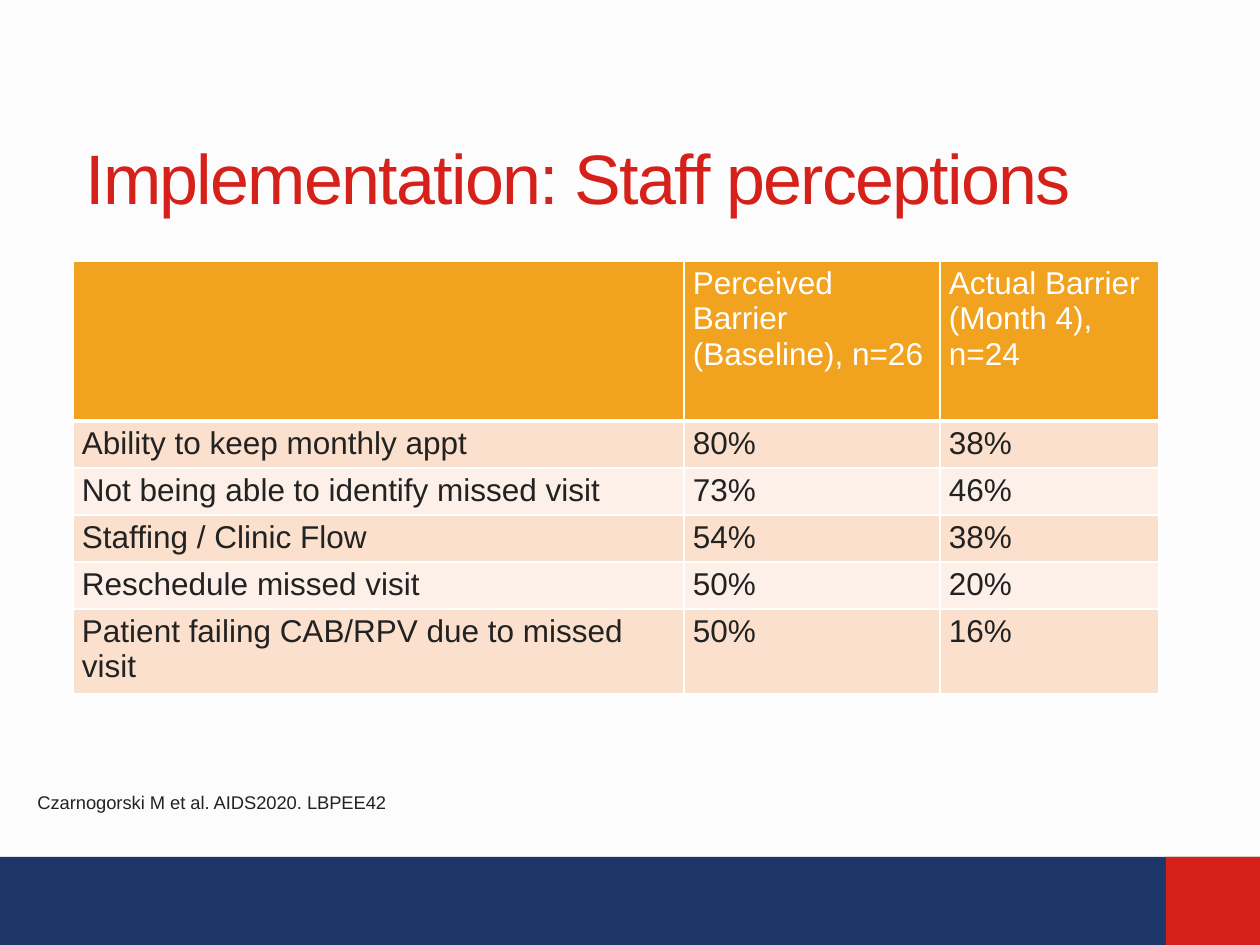
from typing import NamedTuple

import pptx
import pptx.dml.color
import pptx.enum.shapes
import pptx.enum.text
import pptx.oxml
import pptx.oxml.ns
import pptx.util

RGBColor = pptx.dml.color.RGBColor
BACKGROUND = RGBColor(0xFC, 0xFC, 0xFC)
NAVY = RGBColor(0x1C, 0x37, 0x68)
RED = RGBColor(0xD6, 0x20, 0x1A)
ORANGE = RGBColor(0xF1, 0xA2, 0x1F)
PEACH = RGBColor(0xFA, 0xE0, 0xCD)
PALE_PEACH = RGBColor(0xFC, 0xF0, 0xE8)
WHITE = RGBColor(0xFF, 0xFF, 0xFF)
INK = RGBColor(0x22, 0x22, 0x22)

FONT = "Arial"
PX_PER_INCH = 126


class Box(NamedTuple):
    left: int
    top: int
    width: int
    height: int


class Band(NamedTuple):
    box: Box
    color: RGBColor


class Barrier(NamedTuple):
    name: str
    perceived: str
    actual: str


SLIDE = Box(0, 0, 1260, 945)
TITLE = Box(73, 108, 1086, 138)
TABLE = Box(73, 261, 1086, 433)
CITATION = Box(25, 785, 499, 36)
FOOTER_BANDS = [
    Band(Box(0, 857, 1260, 88), NAVY),
    Band(Box(1166, 857, 94, 88), RED),
]
COLUMN_WIDTHS = [611, 256, 219]
ROW_HEIGHTS = [160, 47, 47, 47, 47, 85]
BARRIERS = [
    Barrier("", "Perceived Barrier (Baseline), n=26", "Actual Barrier (Month 4), n=24"),
    Barrier("Ability to keep monthly appt", "80%", "38%"),
    Barrier("Not being able to identify missed visit", "73%", "46%"),
    Barrier("Staffing / Clinic Flow", "54%", "38%"),
    Barrier("Reschedule missed visit", "50%", "20%"),
    Barrier("Patient failing CAB/RPV due to missed visit", "50%", "16%"),
]


def px(length: int) -> int:
    return pptx.util.Inches(length / PX_PER_INCH)


def emu(box: Box) -> list[int]:
    return [px(length) for length in box]


def write(frame, text: str, *, size: float, color: RGBColor, spacing: float = 0) -> None:
    """Fill a text frame; spacing is the letter spacing in points."""
    frame.word_wrap = True
    paragraph = frame.paragraphs[0]
    paragraph.alignment = pptx.enum.text.PP_ALIGN.LEFT
    paragraph.font.size = pptx.util.Pt(size)
    if not text:
        return
    run = paragraph.add_run()
    run.text = text
    run.font.name = FONT
    run.font.size = pptx.util.Pt(size)
    run.font.color.rgb = color
    if spacing:
        run.font._element.set("spc", str(round(spacing * 100)))


def add_band(slide, band: Band) -> None:
    rectangle = slide.shapes.add_shape(
        pptx.enum.shapes.MSO_SHAPE.RECTANGLE, *emu(band.box)
    )
    rectangle.shadow.inherit = False
    rectangle.fill.solid()
    rectangle.fill.fore_color.rgb = band.color
    rectangle.line.fill.background()


def border_cell(cell, bottom_width: int) -> None:
    """Give a cell white 1 pt borders, with its own width at the bottom."""
    properties = cell._tc.get_or_add_tcPr()
    widths = {"lnL": 1, "lnR": 1, "lnT": 1, "lnB": bottom_width}
    for position, (side, width) in enumerate(widths.items()):
        properties.insert(position, pptx.oxml.parse_xml(
            f'<a:{side} {pptx.oxml.ns.nsdecls("a")} w="{pptx.util.Pt(width)}">'
            f'<a:solidFill><a:srgbClr val="{WHITE}"/></a:solidFill></a:{side}>'
        ))


def add_barrier_table(slide) -> None:
    table = slide.shapes.add_table(
        len(BARRIERS), len(COLUMN_WIDTHS), *emu(TABLE)
    ).table
    for column, width in zip(table.columns, COLUMN_WIDTHS):
        column.width = px(width)
    for index, (row, barrier) in enumerate(zip(table.rows, BARRIERS)):
        row.height = px(ROW_HEIGHTS[index])
        is_header = index == 0
        fill = ORANGE if is_header else PEACH if index % 2 else PALE_PEACH
        for cell, text in zip(row.cells, barrier):
            cell.margin_left = cell.margin_right = px(9)
            cell.margin_top = cell.margin_bottom = px(5)
            cell.fill.solid()
            cell.fill.fore_color.rgb = fill
            border_cell(cell, bottom_width=3 if is_header else 1)
            write(cell.text_frame, text, size=18, color=WHITE if is_header else INK)


def add_title(slide) -> None:
    title = slide.shapes.title
    title.left, title.top, title.width, title.height = emu(TITLE)
    title.text_frame.auto_size = pptx.enum.text.MSO_AUTO_SIZE.NONE
    title.text_frame.vertical_anchor = pptx.enum.text.MSO_ANCHOR.MIDDLE
    write(title.text_frame, "Implementation: Staff perceptions",
          size=40, color=RED, spacing=-1)


def main() -> None:
    presentation = pptx.Presentation()
    presentation.slide_width = px(SLIDE.width)
    presentation.slide_height = px(SLIDE.height)
    slide = presentation.slides.add_slide(
        presentation.slide_layouts.get_by_name("Title Only")
    )
    slide.background.fill.solid()
    slide.background.fill.fore_color.rgb = BACKGROUND

    for band in FOOTER_BANDS:
        add_band(slide, band)
    add_title(slide)
    add_barrier_table(slide)
    citation = slide.shapes.add_textbox(*emu(CITATION))
    write(citation.text_frame, "Czarnogorski M et al. AIDS2020. LBPEE42",
          size=10.5, color=INK)

    presentation.save("out.pptx")


if __name__ == "__main__":
    main()
